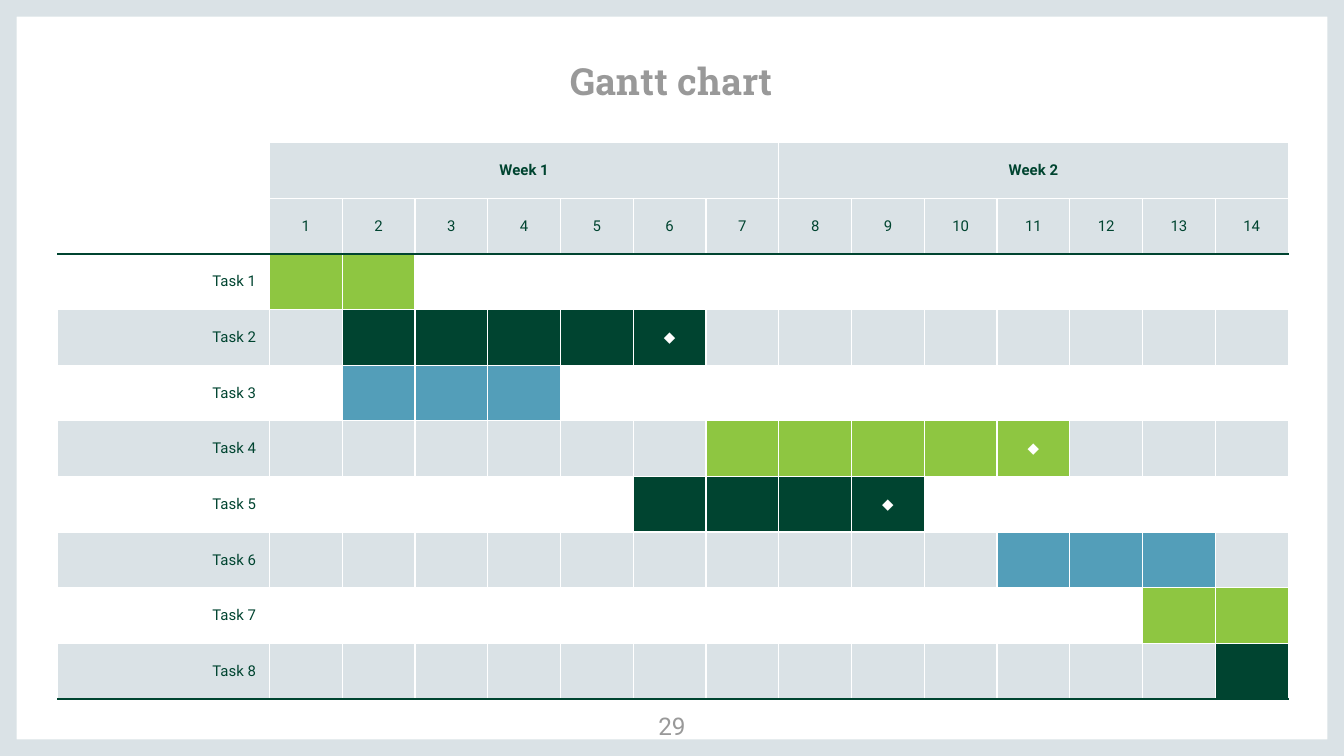
"""Build a two-week Gantt chart slide from a list of tasks."""
from lxml.etree import SubElement
from pptx import Presentation
from pptx.dml.color import RGBColor
from pptx.enum.shapes import MSO_SHAPE as Shape
from pptx.enum.text import MSO_ANCHOR as Anchor, MSO_AUTO_SIZE as AutoSize, PP_ALIGN as Align
from pptx.oxml.ns import qn
from pptx.util import Pt

WHITE = RGBColor(0xFF, 0xFF, 0xFF)
GRAY = RGBColor(0x99, 0x99, 0x99)
MIST = RGBColor(0xDA, 0xE2, 0xE6)
FOREST = RGBColor(0x00, 0x44, 0x30)
LIME = RGBColor(0x8E, 0xC6, 0x41)
BLUE = RGBColor(0x53, 0x9E, 0xB9)

TITLE = "Gantt chart"
PAGE_NUMBER = "29"
WEEKS = ["Week 1", "Week 2"]
DAYS_PER_WEEK = 7
MILESTONE = "◆"
TASKS = [
    ("Task 1", 1, 2, LIME, None),
    ("Task 2", 2, 6, FOREST, 6),
    ("Task 3", 2, 4, BLUE, None),
    ("Task 4", 7, 11, LIME, 11),
    ("Task 5", 6, 9, FOREST, 9),
    ("Task 6", 11, 13, BLUE, None),
    ("Task 7", 13, 14, LIME, None),
    ("Task 8", 14, 14, FOREST, None),
]

WIDTH, HEIGHT = 720, 405
TABLE_LEFT, TABLE_TOP = 30.9, 76.5
LABEL_WIDTH, DAY_WIDTH, ROW_HEIGHT = 113.5, 39, 29.8
HEADER_ROWS = 2
DAYS = len(WEEKS) * DAYS_PER_WEEK
ROWS = HEADER_ROWS + len(TASKS)


def write(para, text, size, color=FOREST, bold=False, name="Roboto", align=Align.CENTER):
    para.alignment = align
    span = para.add_run()
    span.text = text
    span.font.color.rgb = color
    for key, value in {"size": Pt(size), "bold": bold, "name": name}.items():
        setattr(span.font, key, value)


def format_frame(frame, anchor):
    values = {"word_wrap": True, "auto_size": AutoSize.NONE, "vertical_anchor": anchor}
    values |= {f"margin_{side}": Pt(7.2) for side in ("left", "top", "right", "bottom")}
    for key, value in values.items():
        setattr(frame, key, value)


def set_borders(cell, colors):
    properties = cell._tc.get_or_add_tcPr()
    for side, color in colors.items():
        line = SubElement(properties, qn(f"a:ln{side}"), w=str(Pt(0.75)))
        fill = SubElement(line, qn("a:solidFill"))
        SubElement(fill, qn("a:srgbClr"), val=str(color))


def format_cell(cell, row, text="", fill=None, **style):
    top = FOREST if row == HEADER_ROWS else WHITE
    bottom = FOREST if row in (HEADER_ROWS - 1, ROWS - 1) else WHITE
    set_borders(cell, {"L": WHITE, "R": WHITE, "T": top, "B": bottom})
    if fill is None:
        cell.fill.background()
    else:
        cell.fill.solid()
        cell.fill.fore_color.rgb = fill
    cell.vertical_anchor = Anchor.MIDDLE
    write(cell.text_frame.paragraphs[0], text, 8, **style)


def add_frame(page):
    border = page.shapes.add_shape(Shape.FRAME, 0, 0, Pt(WIDTH), Pt(HEIGHT))
    border.adjustments[0] = 0.022
    border.shadow.inherit = False
    border.fill.solid()
    border.fill.fore_color.rgb = MIST
    border.line.fill.background()
    page.shapes._spTree.insert(2, border._element)


def add_title(page):
    title = page.shapes.title
    title.left, title.top, title.width, title.height = Pt(36), Pt(22.5), Pt(648), Pt(40)
    format_frame(title.text_frame, Anchor.BOTTOM)
    write(title.text_frame.paragraphs[0], TITLE, 20, GRAY, True, "Roboto Slab")


def add_page_number(page):
    box = page.shapes.add_textbox(Pt(342), Pt(373.7), Pt(36), Pt(31))
    format_frame(box.text_frame, Anchor.TOP)
    write(box.text_frame.paragraphs[0], PAGE_NUMBER, 13, GRAY)


def add_gantt(page):
    table = page.shapes.add_table(
        ROWS, DAYS + 1, Pt(TABLE_LEFT), Pt(TABLE_TOP),
        Pt(LABEL_WIDTH + DAYS * DAY_WIDTH), Pt(ROWS * ROW_HEIGHT)).table
    table.first_row = table.horz_banding = False
    for index, column in enumerate(table.columns):
        column.width = Pt(DAY_WIDTH if index else LABEL_WIDTH)
    for row in table.rows:
        row.height = Pt(ROW_HEIGHT)

    for row in range(HEADER_ROWS):
        format_cell(table.cell(row, 0), row)
    for day in range(1, DAYS + 1):
        week, offset = divmod(day - 1, DAYS_PER_WEEK)
        format_cell(table.cell(0, day), 0, "" if offset else WEEKS[week], MIST, bold=True)
        format_cell(table.cell(1, day), 1, str(day), MIST)
    for week in range(len(WEEKS)):
        first = 1 + week * DAYS_PER_WEEK
        table.cell(0, first).merge(table.cell(0, first + DAYS_PER_WEEK - 1))

    for index, (name, start, end, color, milestone) in enumerate(TASKS):
        row = HEADER_ROWS + index
        band = MIST if index % 2 else None
        format_cell(table.cell(row, 0), row, name, band, align=Align.RIGHT)
        for day in range(1, DAYS + 1):
            fill = color if start <= day <= end else band
            text = MILESTONE if day == milestone else ""
            format_cell(table.cell(row, day), row, text, fill, color=WHITE)


def main():
    deck = Presentation()
    deck.slide_width, deck.slide_height = Pt(WIDTH), Pt(HEIGHT)
    page = deck.slides.add_slide(deck.slide_layouts[5])
    add_frame(page)
    add_title(page)
    add_page_number(page)
    add_gantt(page)
    deck.save("out.pptx")


if __name__ == "__main__":
    main()
